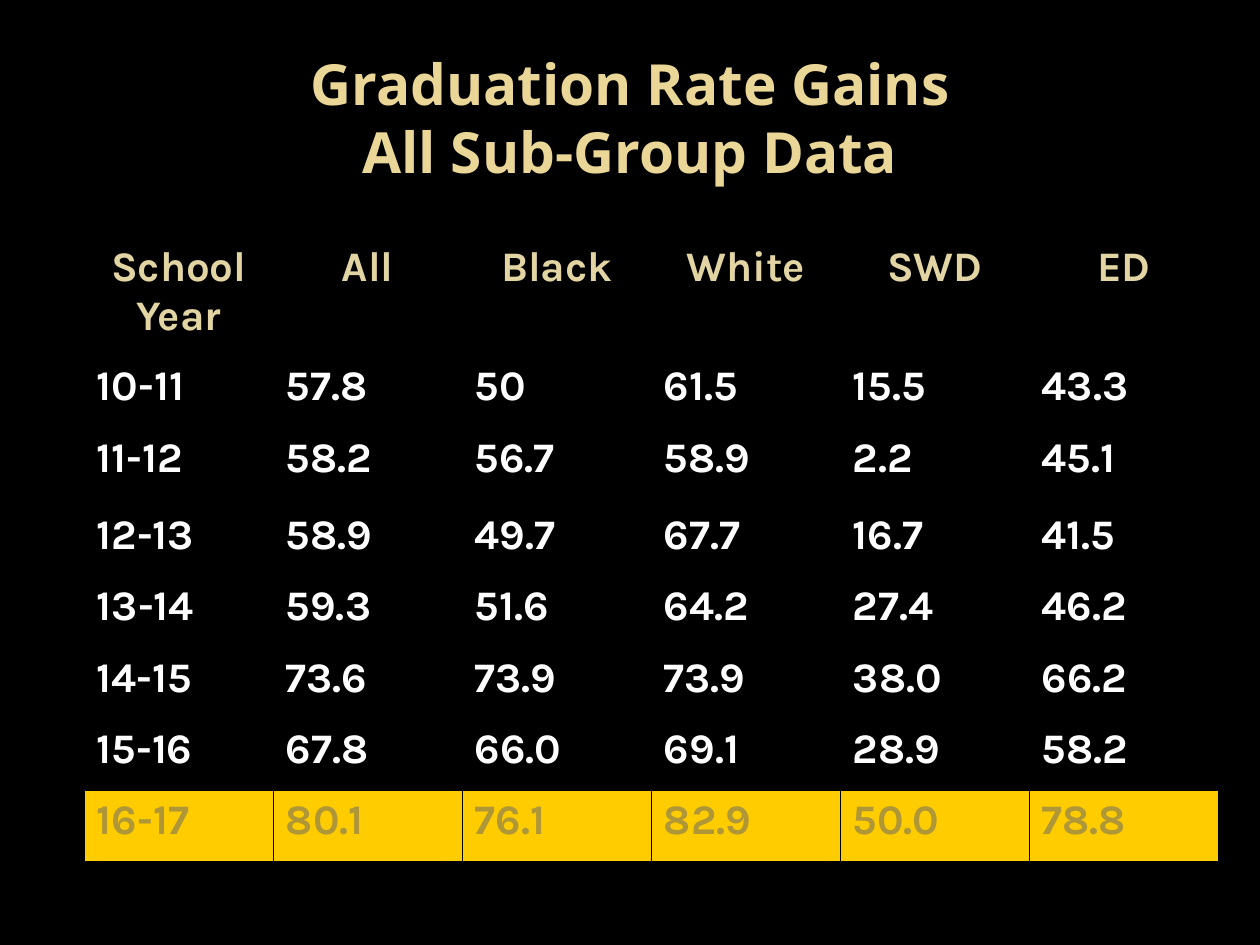
"""Build the slide of graduation rate gains by sub-group."""
from lxml import etree
from pptx import Presentation
from pptx import util as u
from pptx.dml import color
from pptx.enum import text
from pptx.oxml import ns


def paint(hue):
    return color.RGBColor.from_string(hue)


def write(para, words, face, size, hue):
    run = para.add_run()
    run.text = words
    font = run.font
    font.name, font.size, font.bold = face, u.Pt(size), True
    font.color.rgb = paint(hue)


deck = Presentation()
deck.slide_width, deck.slide_height = u.Cm(25.4), u.Cm(19.05)
slide = deck.slides.add_slide(deck.slide_layouts[6])
slide.background.fill.solid()
slide.background.fill.fore_color.rgb = paint("000000")

title = slide.shapes.add_textbox(u.Cm(1.27), u.Cm(0.76), u.Cm(22.86), u.Cm(3.18))
frame = title.text_frame
frame.word_wrap = True
frame.vertical_anchor = text.MSO_ANCHOR.MIDDLE
para = frame.paragraphs[0]
para.alignment = text.PP_ALIGN.CENTER
write(para, "Graduation Rate Gains", "Noto Sans", 32.4, "EAD696")
para.add_line_break()
write(para, "All Sub-Group Data", "Noto Sans", 32.4, "EAD696")

rates = [
    ["School\nYear", "All", "Black", "White", "SWD", "ED"],
    ["10-11", "57.8", "50", "61.5", "15.5", "43.3"],
    ["11-12", "58.2", "56.7", "58.9", "2.2", "45.1"],
    ["12-13", "58.9", "49.7", "67.7", "16.7", "41.5"],
    ["13-14", "59.3", "51.6", "64.2", "27.4", "46.2"],
    ["14-15", "73.6", "73.9", "73.9", "38.0", "66.2"],
    ["15-16", "67.8", "66.0", "69.1", "28.9", "58.2"],
    ["16-17", "80.1", "76.1", "82.9", "50.0", "78.8"],
]
last = len(rates) - 1
highs = [2.39, 1.45, 1.55] + [1.44] * 5
table = slide.shapes.add_table(
    len(rates), len(rates[0]), u.Cm(1.7), u.Cm(4.78), u.Cm(22.86), u.Cm(sum(highs))
).table
table.first_row = table.horz_banding = False
for col in table.columns:
    col.width = u.Cm(3.81)

for r, row in enumerate(rates):
    table.rows[r].height = u.Cm(highs[r])
    hue = {0: "E2D5A3", last: "AF9738"}.get(r, "FFFFFF")
    for c, words in enumerate(row):
        cell = table.cell(r, c)
        props = cell._tc.get_or_add_tcPr()
        for side in ("a:lnL", "a:lnR", "a:lnT", "a:lnB"):
            edge = etree.SubElement(props, ns.qn(side), w=str(u.Pt(1)))
            fill = etree.SubElement(edge, ns.qn("a:solidFill"))
            etree.SubElement(fill, ns.qn("a:srgbClr"), val="000000")
        if r == last:
            cell.fill.solid()
            cell.fill.fore_color.rgb = paint("FFCC00")
        else:
            cell.fill.background()
        frame = cell.text_frame
        for n, line in enumerate(words.split("\n")):
            para = frame.add_paragraph() if n else frame.paragraphs[0]
            para.alignment = text.PP_ALIGN.LEFT if r else text.PP_ALIGN.CENTER
            write(para, line, "Karla", 24, hue)

deck.save("out.pptx")
